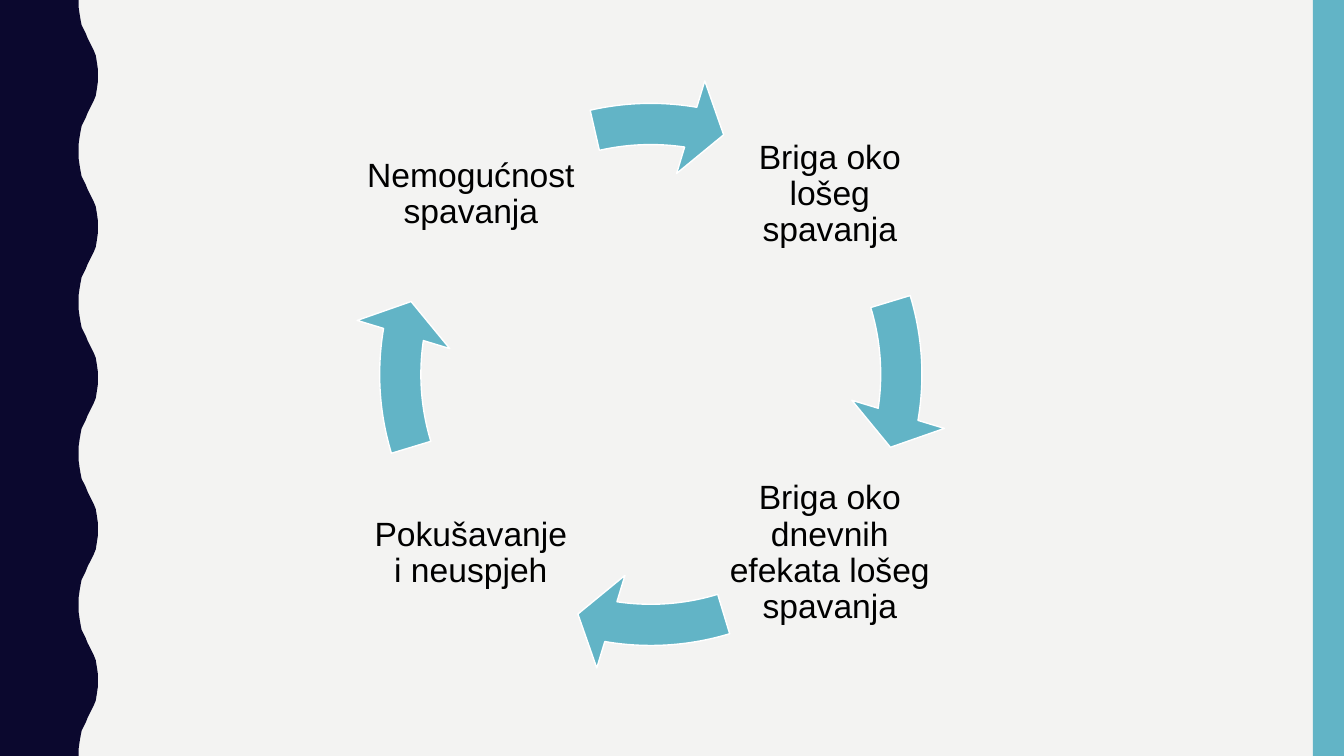
from dataclasses import dataclass

import pptx
import pptx.dml.color
import pptx.enum.shapes
import pptx.enum.text
import pptx.util
from pptx.util import Inches

NAVY, TEAL, PAPER, WHITE, BLACK = "0B082E", "62B4C6", "F3F3F2", "FFFFFF", "000000"
SLIDE_WIDTH, SLIDE_HEIGHT = 13.33, 7.5

# Half a wave of the left edge, from trough to crest: (x, y)
HALF_WAVE = [
    (0.78, 0), (0.78, 0.07), (0.79, 0.14), (0.8, 0.2), (0.81, 0.25),
    (0.83, 0.29), (0.85, 0.33), (0.87, 0.38), (0.89, 0.42), (0.91, 0.46),
    (0.93, 0.5), (0.95, 0.55), (0.96, 0.61), (0.97, 0.68), (0.97, 0.75),
]
WAVE_HEIGHT = 1.5
WAVE_COUNT = 5

# Arrow adjustments count 100000 units of 1/60000 degree as 1
DEGREE = 0.6


@dataclass
class Stage:
    """A step of the cycle and the arrow that follows it."""
    text: str
    left: float
    top: float
    width: float
    arrow_start: float
    arrow_end: float


STAGES = [
    Stage("Briga oko lošeg spavanja", 7.18, 0.88, 2.1, 343.08, 9.17),
    Stage("Briga oko dnevnih efekata lošeg spavanja", 7.18, 4.44, 2.1, 73.08, 99.17),
    Stage("Pokušavanje i neuspjeh", 3.62, 4.44, 2.1, 163.08, 189.17),
    Stage("Nemogućnost spavanja", 3.45, 0.88, 2.44, 257.08, 279.17),
]


def paint(fill, colour: str) -> None:
    fill.solid()
    fill.fore_color.rgb = pptx.dml.color.RGBColor.from_string(colour)


def add_text(slide, text: str, *, left: float, top: float, width: float, height: float,
             size: float = 24, font: str = "Arial", colour: str = BLACK,
             margin: float = 0.03, line_spacing: float = 0.9) -> None:
    box = slide.shapes.add_textbox(Inches(left), Inches(top), Inches(width), Inches(height))
    frame = box.text_frame
    frame.word_wrap = True
    frame.vertical_anchor = pptx.enum.text.MSO_ANCHOR.MIDDLE
    frame.margin_left = frame.margin_right = Inches(margin)
    frame.margin_top = frame.margin_bottom = Inches(margin)
    para = frame.paragraphs[0]
    para.alignment = pptx.enum.text.PP_ALIGN.CENTER
    para.line_spacing = line_spacing
    span = para.add_run()
    span.text = text
    span.font.size = pptx.util.Pt(size)
    span.font.name = font
    paint(span.font.fill, colour)


def add_wavy_edge(slide) -> None:
    crest_to_trough = [(x, WAVE_HEIGHT - y) for x, y in reversed(HALF_WAVE[:-1])]
    wave = HALF_WAVE + crest_to_trough[:-1]
    points = [(x, y + number * WAVE_HEIGHT) for number in range(WAVE_COUNT) for x, y in wave]
    points += [(HALF_WAVE[0][0], SLIDE_HEIGHT), (0, SLIDE_HEIGHT)]
    builder = slide.shapes.build_freeform(0, 0)
    builder.add_line_segments([(Inches(x), Inches(y)) for x, y in points], close=True)
    edge = builder.convert_to_shape()
    edge.shadow.inherit = False
    paint(edge.fill, NAVY)
    edge.line.fill.background()


def add_side_bar(slide) -> None:
    bar = slide.shapes.add_shape(pptx.enum.shapes.MSO_SHAPE.RECTANGLE,
                                 Inches(13.02), 0, Inches(0.31), Inches(SLIDE_HEIGHT))
    bar.shadow.inherit = False
    paint(bar.fill, TEAL)
    bar.line.fill.background()


def add_cycle_arrow(slide, stage: Stage) -> None:
    arrow = slide.shapes.add_shape(pptx.enum.shapes.MSO_SHAPE.CIRCULAR_ARROW,
                                   Inches(3.49), Inches(0.75), Inches(5.93), Inches(5.93))
    settings = [0.069, 7.75 * DEGREE, stage.arrow_end * DEGREE, stage.arrow_start * DEGREE, 0.081]
    for index, value in enumerate(settings):
        arrow.adjustments[index] = value
    arrow.shadow.inherit = False
    paint(arrow.fill, TEAL)
    paint(arrow.line.fill, WHITE)
    arrow.line.width = pptx.util.Pt(1)


def main() -> None:
    deck = pptx.Presentation()
    deck.slide_width = Inches(SLIDE_WIDTH)
    deck.slide_height = Inches(SLIDE_HEIGHT)
    slide = deck.slides.add_slide(deck.slide_layouts.get_by_name("Blank"))

    # Background and side decoration
    paint(slide.background.fill, PAPER)
    add_wavy_edge(slide)
    add_side_bar(slide)

    # Insomnia cycle
    for stage in STAGES:
        add_text(slide, stage.text, left=stage.left, top=stage.top,
                 width=stage.width, height=2.1)
        add_cycle_arrow(slide, stage)

    deck.save("out.pptx")


if __name__ == "__main__":
    main()
